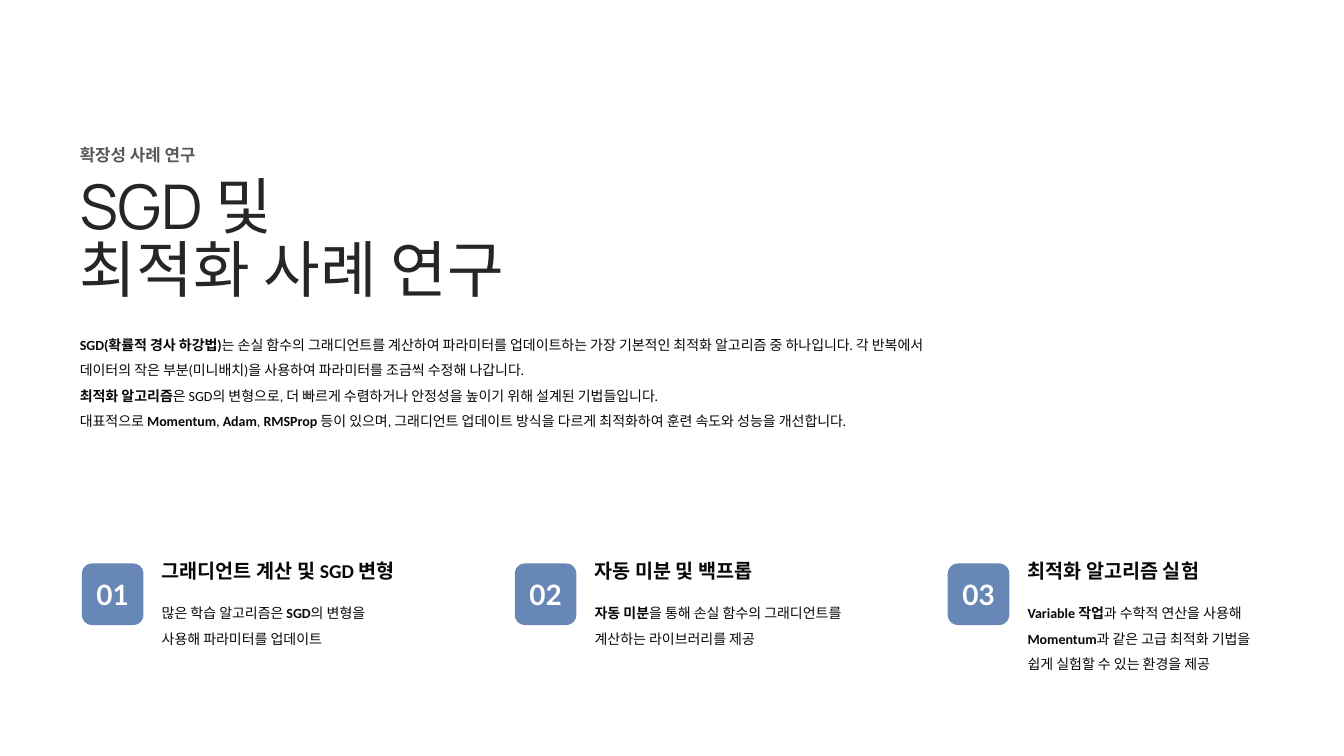
from dataclasses import dataclass

from pptx import Presentation
from pptx.dml.color import RGBColor
from pptx.enum.shapes import MSO_SHAPE as Shape
from pptx.enum.text import MSO_ANCHOR as Anchor, MSO_AUTO_SIZE as AutoSize, PP_ALIGN as Align
from pptx.slide import Slide
from pptx.text.text import TextFrame
from pptx.util import Length, Pt


@dataclass(frozen=True)
class TextStyle:
    font: str
    size: float
    color: RGBColor
    bold: bool = False
    spacing: float | Length | None = None
    align: Align = Align.LEFT


@dataclass(frozen=True)
class Theme:
    badge_fill: RGBColor = RGBColor(0x67, 0x87, 0xB7)
    eyebrow: TextStyle = TextStyle("Lato", 12, RGBColor(0x59, 0x59, 0x59), True, Pt(10))
    title: TextStyle = TextStyle("Manrope", 44, RGBColor(0x26, 0x26, 0x26), spacing=Pt(45))
    body: TextStyle = TextStyle("Calibri", 10, RGBColor(0x08, 0x08, 0x08), spacing=1.5)
    heading: TextStyle = TextStyle("Calibri", 14, RGBColor(0x08, 0x08, 0x08), True)
    number: TextStyle = TextStyle("Lato", 20, RGBColor(0xFF, 0xFF, 0xFF), True, align=Align.CENTER)


@dataclass(frozen=True)
class Box:
    left: float
    top: float
    width: float
    height: float

    def lengths(self) -> tuple[Length, Length, Length, Length]:
        return Pt(self.left), Pt(self.top), Pt(self.width), Pt(self.height)


@dataclass(frozen=True)
class Topic:
    heading: str
    detail: str
    detail_width: float
    detail_height: float


THEME = Theme()
BOLD_MARK = "*"
MARGIN = 57
TOPIC_LEFT = 58.5
TOPIC_STEP = 309.25
BADGE_TOP = 402.5
BADGE_SIZE = 44
TEXT_OFFSET = 57

EYEBROW = ["확장성 사례 연구"]
TITLE = ["SGD 및", "최적화 사례 연구"]
INTRO = [
    "*SGD(확률적 경사 하강법)*는 손실 함수의 그래디언트를 계산하여 파라미터를 업데이트하는 "
    "가장 기본적인 최적화 알고리즘 중 하나입니다. 각 반복에서 데이터의 작은 부분(미니배치)을 "
    "사용하여 파라미터를 조금씩 수정해 나갑니다.",
    "*최적화 알고리즘*은 SGD의 변형으로, 더 빠르게 수렴하거나 안정성을 높이기 위해 설계된 기법들입니다.",
    "대표적으로 *Momentum*, *Adam*, *RMSProp* 등이 있으며, 그래디언트 업데이트 방식을 "
    "다르게 최적화하여 훈련 속도와 성능을 개선합니다.",
]
TOPICS = [
    Topic("그래디언트 계산 및 SGD 변형",
          "많은 학습 알고리즘은 *SGD*의 변형을 사용해 파라미터를 업데이트", 168.5, 35),
    Topic("자동 미분 및 백프롭",
          "*자동 미분*을 통해 손실 함수의 그래디언트를 계산하는 라이브러리를 제공", 190, 35),
    Topic("최적화 알고리즘 실험",
          "*Variable 작업*과 수학적 연산을 사용해 *Momentum*과 같은 고급 최적화 기법을 "
          "쉽게 실험할 수 있는 환경을 제공", 177, 52.5),
]


def write(frame: TextFrame, lines: list[str], style: TextStyle) -> None:
    frame.margin_left = frame.margin_top = frame.margin_right = frame.margin_bottom = 0
    for index, line in enumerate(lines):
        paragraph = frame.add_paragraph() if index else frame.paragraphs[0]
        paragraph.alignment = style.align
        paragraph.line_spacing = style.spacing
        paragraph.font.name = style.font
        paragraph.font.size = Pt(style.size)
        paragraph.font.color.rgb = style.color
        paragraph.font.bold = style.bold
        for part, words in enumerate(line.split(BOLD_MARK)):
            if words:
                run = paragraph.add_run()
                run.text = words
                if part % 2:
                    run.font.bold = True


def add_text(slide: Slide, box: Box, lines: list[str], style: TextStyle) -> None:
    frame = slide.shapes.add_textbox(*box.lengths()).text_frame
    frame.word_wrap = True
    frame.auto_size = AutoSize.SHAPE_TO_FIT_TEXT
    write(frame, lines, style)


def add_badge(slide: Slide, box: Box, number: str) -> None:
    badge = slide.shapes.add_shape(Shape.ROUNDED_RECTANGLE, *box.lengths())
    badge.shadow.inherit = False
    badge.fill.solid()
    badge.fill.fore_color.rgb = THEME.badge_fill
    badge.line.fill.background()
    badge.text_frame.vertical_anchor = Anchor.MIDDLE
    write(badge.text_frame, [number], THEME.number)


def add_topic(slide: Slide, index: int, topic: Topic) -> None:
    left = TOPIC_LEFT + index * TOPIC_STEP
    text_left = left + TEXT_OFFSET
    add_badge(slide, Box(left, BADGE_TOP, BADGE_SIZE, BADGE_SIZE), f"{index + 1:02}")
    add_text(slide, Box(text_left, 399.5, 181.5, 17), [topic.heading], THEME.heading)
    add_text(slide, Box(text_left, 426, topic.detail_width, topic.detail_height),
             [topic.detail], THEME.body)


def main() -> None:
    deck = Presentation()
    deck.slide_width, deck.slide_height = Pt(960), Pt(540)
    slide = deck.slides.add_slide(deck.slide_layouts[6])
    add_text(slide, Box(MARGIN, 108, 386, 11), EYEBROW, THEME.eyebrow)
    add_text(slide, Box(MARGIN, 127.5, 386, 90.5), TITLE, THEME.title)
    add_text(slide, Box(MARGIN, 234.5, 608.5, 70.5), INTRO, THEME.body)
    for index, topic in enumerate(TOPICS):
        add_topic(slide, index, topic)
    deck.save("out.pptx")


if __name__ == "__main__":
    main()
